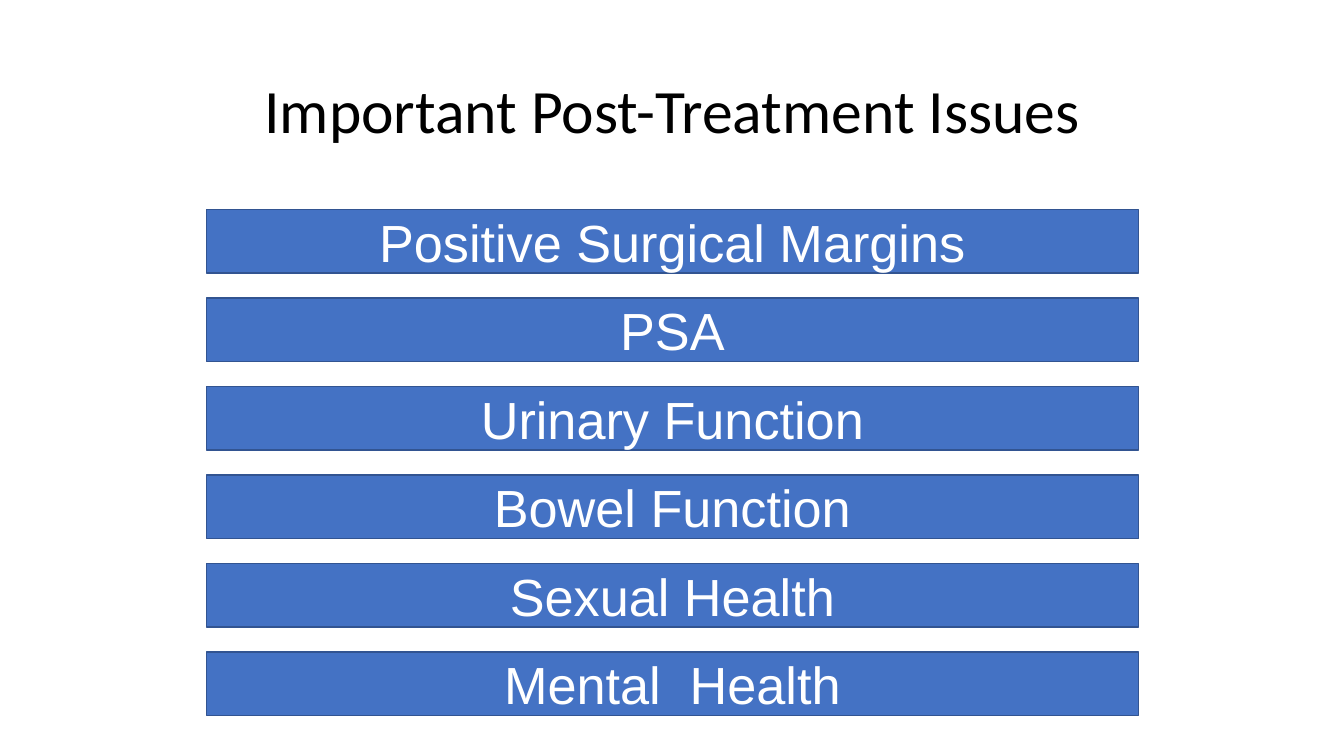
"""Build the slide on important post-treatment issues."""
import pptx
import pptx.dml.color
import pptx.enum.shapes
import pptx.enum.text
import pptx.util

Inches = pptx.util.Inches

TITLE = "Important Post-Treatment Issues"
ISSUES = [
    "Positive Surgical Margins",
    "PSA",
    "Urinary Function",
    "Bowel Function",
    "Sexual Health",
    "Mental  Health",
]
BAR_LEFT, BAR_WIDTH, BAR_HEIGHT = 2.05, 9.24, 0.63
FIRST_TOP, LAST_TOP = 2.08, 6.47


def color(hex_string):
    return pptx.dml.color.RGBColor.from_string(hex_string)


def write_text(shape, text, *, font, size, fill, line_spacing=1.0):
    frame = shape.text_frame
    frame.word_wrap = True
    frame.auto_size = pptx.enum.text.MSO_AUTO_SIZE.NONE
    frame.vertical_anchor = pptx.enum.text.MSO_ANCHOR.MIDDLE
    paragraph = frame.paragraphs[0]
    paragraph.alignment = pptx.enum.text.PP_ALIGN.CENTER
    paragraph.line_spacing = line_spacing
    run = paragraph.add_run()
    run.text = text
    run.font.name = font
    run.font.size = pptx.util.Pt(size)
    run.font.color.rgb = color(fill)


def add_bar(slide, top, text):
    bar = slide.shapes.add_shape(
        pptx.enum.shapes.MSO_SHAPE.RECTANGLE,
        Inches(BAR_LEFT), Inches(top), Inches(BAR_WIDTH), Inches(BAR_HEIGHT),
    )
    bar.shadow.inherit = False
    bar.fill.solid()
    bar.fill.fore_color.rgb = color("4472C4")
    bar.line.color.rgb = color("325491")
    bar.line.width = pptx.util.Pt(1)
    write_text(bar, text, font="Arial", size=37.3, fill="FFFFFF")


def main():
    presentation = pptx.Presentation()
    presentation.slide_width = Inches(13.33)
    presentation.slide_height = Inches(7.5)
    slide = presentation.slides.add_slide(presentation.slide_layouts[5])

    title = slide.shapes.title
    title.left, title.top = Inches(0.92), Inches(0.4)
    title.width, title.height = Inches(11.5), Inches(1.45)
    write_text(title, TITLE, font="Calibri", size=44, fill="000000", line_spacing=0.9)

    pitch = (LAST_TOP - FIRST_TOP) / (len(ISSUES) - 1)
    for index, issue in enumerate(ISSUES):
        add_bar(slide, FIRST_TOP + index * pitch, issue)

    presentation.save("out.pptx")


if __name__ == "__main__":
    main()
